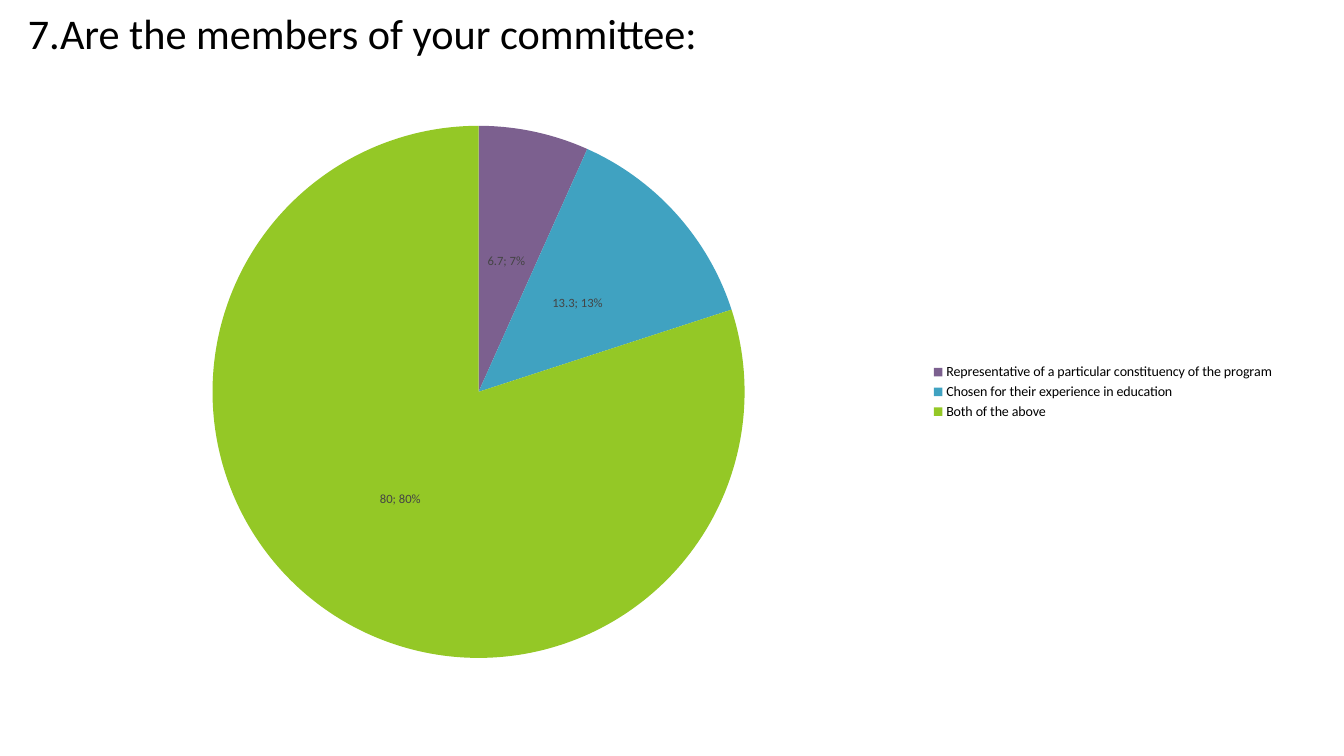
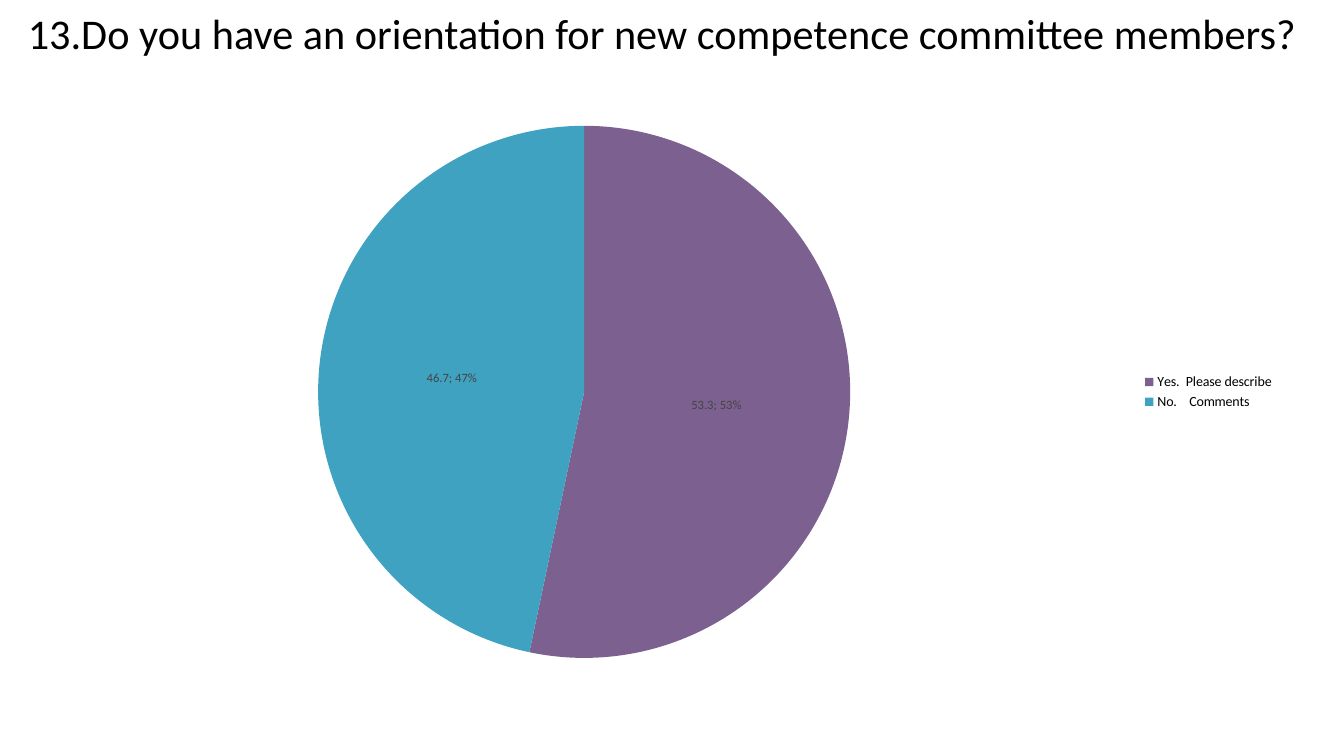
"""Build two survey slides, each a question with a pie of its answers."""
from pptx import Presentation
from pptx.chart import data
from pptx.dml.color import RGBColor
from pptx.enum import chart as charts, text
from pptx.util import Cm, Pt

COLOURS = {
    "text": "000000",
    "label": "444444",
    "first": "7C608F",
    "second": "40A2C1",
    "third": "94C826",
}
SLICES = ("first", "second", "third")
FONT = "Calibri"

QUESTIONS = [
    ("7.Are the members of your committee:", {
        "Representative of a particular constituency of the program ": 6.7,
        "Chosen for their experience in education ": 13.3,
        "Both of the above ": 80,
    }),
    ("13.Do you have an orientation for new competence committee members?", {
        "Yes.  Please describe ": 53.3,
        "No.    Comments ": 46.7,
    }),
]


class SurveyDeck:
    """Hold the survey style and the current slide."""

    def __init__(self):
        self.deck = Presentation()
        self.deck.slide_width, self.deck.slide_height = Cm(33.87), Cm(19.05)
        self.slide = None

    def style(self, font, size, colour="text"):
        """Apply the shared typeface with a size and colour."""
        font.name, font.size = FONT, Pt(size)
        font.color.rgb = RGBColor.from_string(COLOURS[colour])

    def add_question(self, question):
        """Start a slide headed by its question."""
        self.slide = self.deck.slides.add_slide(self.deck.slide_layouts[5])
        title = self.slide.shapes.title
        title.left, title.top = Cm(0.36), Cm(0)
        title.width, title.height = Cm(33.5), Cm(2.1)
        frame = title.text_frame
        frame.text = question
        frame.word_wrap = True
        frame.auto_size = text.MSO_AUTO_SIZE.NONE
        frame.vertical_anchor = text.MSO_ANCHOR.TOP
        frame.margin_left = frame.margin_right = Cm(0.34)
        frame.margin_top = frame.margin_bottom = Cm(0.17)
        paragraph = frame.paragraphs[0]
        paragraph.alignment = text.PP_ALIGN.LEFT
        self.style(paragraph.font, 30.2)

    def add_pie(self, answers):
        """Draw the share of each answer with a legend on the right."""
        shares = data.CategoryChartData()
        shares.categories = list(answers)
        shares.add_series("Series 1", list(answers.values()))
        pie = self.slide.shapes.add_chart(
            charts.XL_CHART_TYPE.PIE,
            Cm(0.7), Cm(2.82), Cm(31.75), Cm(14.11), shares).chart
        self.style(pie.font, 10)
        pie.has_title = False
        pie.has_legend = True
        pie.legend.position = charts.XL_LEGEND_POSITION.RIGHT
        pie.legend.include_in_layout = False
        self.style(pie.legend.font, 10)

        plot = pie.plots[0]
        plot.vary_by_categories = True
        for index, colour in zip(range(len(answers)), SLICES):
            fill = plot.series[0].points[index].format.fill
            fill.solid()
            fill.fore_color.rgb = RGBColor.from_string(COLOURS[colour])

        labels = plot.series[0].data_labels
        labels.show_value = labels.show_percentage = True
        labels.number_format = "#%"
        labels.number_format_is_linked = False
        labels.position = charts.XL_LABEL_POSITION.CENTER
        self.style(labels.font, 9, "label")


def main():
    """Build every question slide and save the deck."""
    survey = SurveyDeck()
    for question, answers in QUESTIONS:
        survey.add_question(question)
        survey.add_pie(answers)
    survey.deck.save("out.pptx")


if __name__ == "__main__":
    main()
